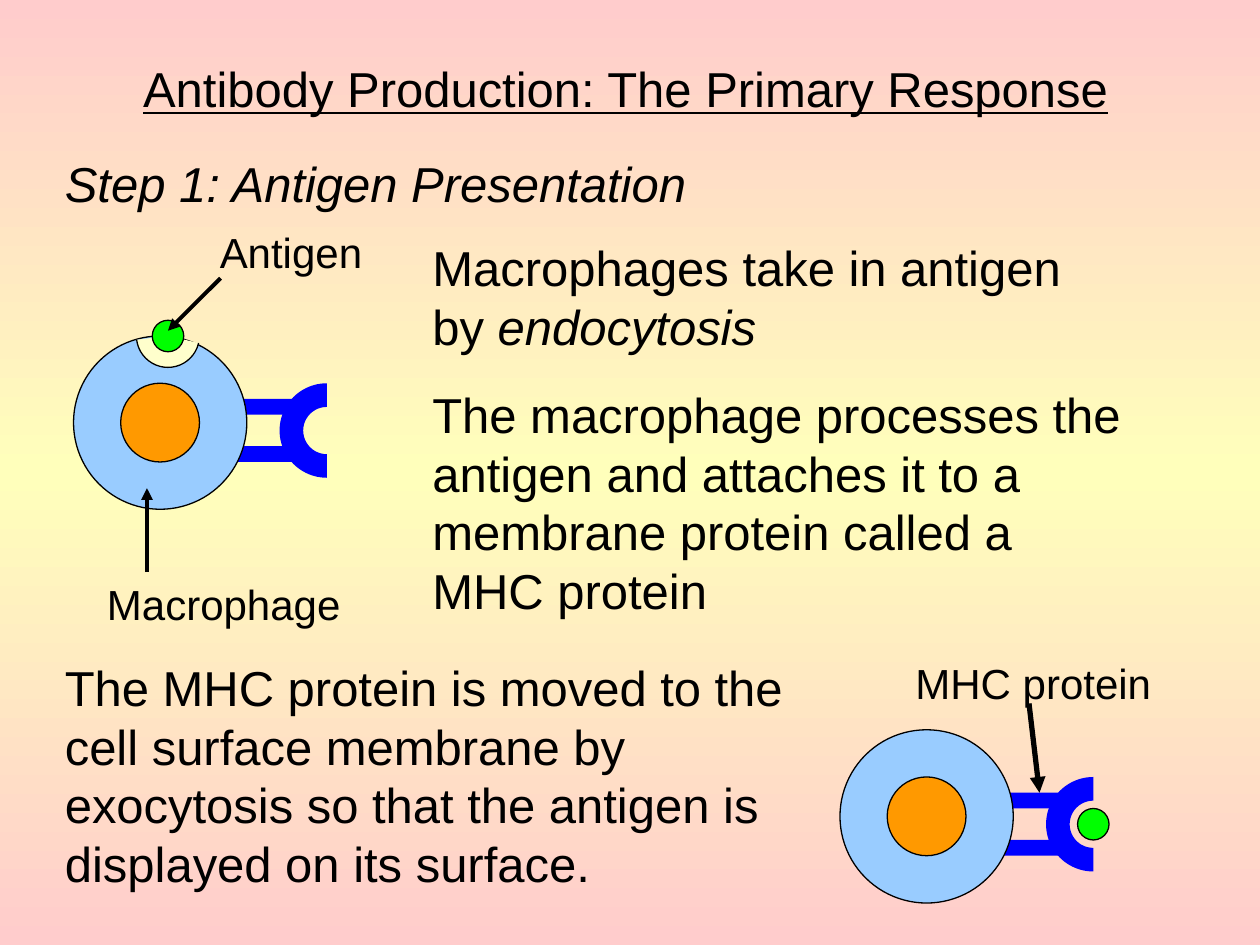
from copy import deepcopy

from pptx import Presentation
from pptx.dml.color import RGBColor
from pptx.enum.shapes import MSO_CONNECTOR as CONN, MSO_SHAPE as SHAPE
from pptx.enum.text import MSO_ANCHOR as ANCHOR, MSO_AUTO_SIZE as AUTO, PP_ALIGN as ALIGN
from pptx.oxml.ns import qn
from pptx.util import Emu, Pt

PX = 9525  # EMU per px, 96 px to the inch
COLORS = {
    "edge": "FFCCCC", "middle": "FFFFBB", "ink": "000000", "cell": "99CCFF",
    "nucleus": "FF9900", "protein": "0000FF", "antigen": "00FF00", "pit": "FFFFCC",
}


def px(*values):
    return [Emu(v * PX) for v in values]


def rgb(name):
    return RGBColor.from_string(COLORS[name])


class Deck:
    font = "Arial"
    body, label = 28, 24

    def __init__(self, width, height):
        self.prs = Presentation()
        self.prs.slide_width, self.prs.slide_height = px(width, height)
        self.s = self.prs.slides.add_slide(self.prs.slide_layouts[5])

    def background(self, *names):
        fill = self.s.background.fill
        fill.gradient()
        fill.gradient_angle = 270
        stops = self.s.element.find(".//" + qn("a:gsLst"))
        stops.append(deepcopy(stops[-1]))
        for i, (stop, name) in enumerate(zip(fill.gradient_stops, names)):
            stop.position = i / (len(names) - 1)
            stop.color.rgb = rgb(name)

    def set_text(self, sp, runs, size, wrap=True, align=ALIGN.LEFT):
        """Fill a shape with one paragraph of (text, font values) runs."""
        tf = sp.text_frame
        frame = {"word_wrap": wrap, "auto_size": AUTO.SHAPE_TO_FIT_TEXT,
                 "vertical_anchor": ANCHOR.TOP}
        for key, value in frame.items():
            setattr(tf, key, value)
        p = tf.paragraphs[0]
        p.alignment = align
        for text, style in runs:
            r = p.add_run()
            r.text = text
            for key, value in {"name": self.font, "size": Pt(size), **style}.items():
                setattr(r.font, key, value)
            r.font.color.rgb = rgb("ink")

    def title(self, text, *box):
        sp = self.s.shapes.title
        sp.left, sp.top, sp.width, sp.height = px(*box)
        self.set_text(sp, [(text, {"underline": True})], self.body, align=ALIGN.CENTER)

    def text(self, runs, *box):
        self.set_text(self.s.shapes.add_textbox(*px(*box)), runs, self.body)

    def caption(self, text, *box):
        sp = self.s.shapes.add_textbox(*px(*box))
        self.set_text(sp, [(text, {})], self.label, wrap=False)

    def shape(self, kind, fill, *box, outline=True):
        sp = self.s.shapes.add_shape(kind, *px(*box))
        sp.shadow.inherit = False
        sp.fill.solid()
        sp.fill.fore_color.rgb = rgb(fill)
        if outline:
            sp.line.color.rgb = rgb("ink")
            sp.line.width = Pt(0.75)
        else:
            sp.line.fill.background()
        return sp

    def arrow(self, x1, y1, x2, y2, width=2.25):
        sp = self.s.shapes.add_connector(CONN.STRAIGHT, *px(x1, y1, x2, y2))
        sp.line.color.rgb = rgb("ink")
        sp.line.width = Pt(width)
        props = sp.element.spPr
        ln = props.find(qn("a:ln"))
        ln.append(ln.makeelement(qn("a:tailEnd"), {"type": "triangle"}))
        props.append(props.makeelement(qn("a:effectLst"), {}))

    def macrophage(self, x, y):
        """Cell with its nucleus and the MHC protein on its right."""
        cup = self.shape(SHAPE.BLOCK_ARC, "protein", x + 157, y + 36, 72, 72, outline=False)
        cup.rotation = 270
        for dy in (84, 48):
            self.shape(SHAPE.RECTANGLE, "protein", x + 109, y + dy, 60, 12, outline=False)
        self.shape(SHAPE.OVAL, "cell", x, y, 132, 132)
        self.shape(SHAPE.OVAL, "nucleus", x + 36, y + 36, 60, 60)

    def pit(self, x, y, size, start, end):
        sp = self.shape(SHAPE.ARC, "pit", x, y, size, size)
        for i, degrees in enumerate((start, end)):
            sp.adjustments[i] = degrees * 0.6  # 60000ths of a degree over 100000

    def antigen(self, x, y):
        self.shape(SHAPE.OVAL, "antigen", x, y, 24, 24)


def main():
    d = Deck(960, 720)
    d.background("edge", "middle", "edge")

    # Headings
    d.title("Antibody Production: The Primary Response", 48, 40, 857, 55)
    d.text([("Step 1: Antigen Presentation", {"italic": True})], 40, 112, 720, 55)

    # Endocytosis
    d.text([("Macrophages take in antigen by ", {}), ("endocytosis", {"italic": True})],
           320, 176, 545, 99)
    d.macrophage(56, 256)
    d.pit(104, 232, 48, 13, 173)
    d.antigen(116, 244)
    d.caption("Antigen", 158, 168, 128, 48)
    d.arrow(168, 212, 128, 252)
    d.caption("Macrophage", 72, 436, 198, 48)
    d.arrow(112, 436, 112, 372)

    # Processing
    d.text([("The macrophage processes the antigen and attaches it to a "
             "membrane protein called a MHC protein", {})], 320, 288, 545, 189)

    # Display on the surface
    d.text([("The MHC protein is moved to the cell surface membrane by exocytosis "
             "so that the antigen is displayed on its surface.", {})], 40, 496, 568, 189)
    d.macrophage(640, 556)
    d.antigen(821, 616)
    d.caption("MHC protein", 688, 496, 199, 48)
    d.arrow(784, 536, 792, 604, width=3)

    d.prs.save("out.pptx")


if __name__ == "__main__":
    main()
